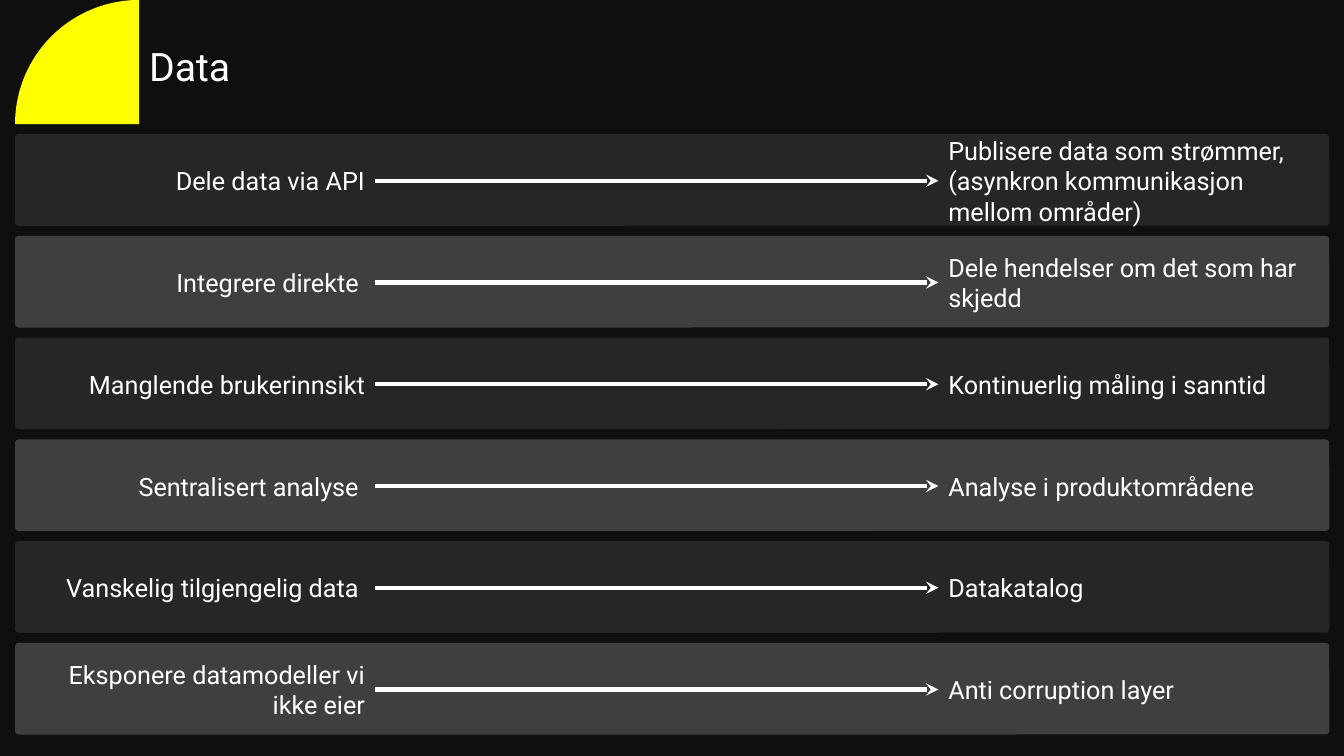
from math import cos, pi, sin

from lxml import etree
from pptx import Presentation
from pptx.dml.color import RGBColor
from pptx.enum.shapes import MSO_CONNECTOR, MSO_SHAPE
from pptx.enum.text import MSO_ANCHOR, PP_ALIGN
from pptx.oxml.ns import qn
from pptx.util import Cm, Pt

COLORS = {
    "background": "0F0F0F",
    "dark": "262626",
    "light": "3F3F3F",
    "text": "FFFFFF",
    "accent": "FFFF00",
}
ROWS = [
    ("Dele data via API",
     ["Publisere data som strømmer,", "(asynkron kommunikasjon mellom områder)"]),
    ("Integrere direkte ", ["Dele hendelser om det som har skjedd"]),
    ("Manglende brukerinnsikt", ["Kontinuerlig måling i sanntid"]),
    ("Sentralisert analyse ", ["Analyse i produktområdene"]),
    ("Vanskelig tilgjengelig data ", ["Datakatalog"]),
    ("Eksponere datamodeller vi ikke eier", ["Anti corruption layer"]),
]

# Layout in centimetres
LEFT, BAND_W, BAND_H = 0.38, 33.12, 2.31
FIRST_TOP, LAST_TOP = 3.38, 16.2
PITCH = (LAST_TOP - FIRST_TOP) / (len(ROWS) - 1)
FROM_W, TO_LEFT, LABEL_H = 9.07, 23.65, 1.02
RADIUS = 3.13


def rgb(name):
    return RGBColor.from_string(COLORS[name])


def add_text(shapes, x, y, w, h, lines, size, align=PP_ALIGN.LEFT):
    sp = shapes.add_textbox(Cm(x), Cm(y), Cm(w), Cm(h))
    tf = sp.text_frame
    tf.word_wrap = True
    tf.vertical_anchor = MSO_ANCHOR.MIDDLE
    tf.text = "\n".join(lines)
    for p in tf.paragraphs:
        p.alignment = align
        p.font.name = "Roboto"
        p.font.size = Pt(size)
        p.font.color.rgb = rgb("text")
    return sp


prs = Presentation()
prs.slide_width, prs.slide_height = Cm(33.87), Cm(19.05)
s = prs.slides.add_slide(prs.slide_layouts[6])
s.background.fill.solid()
s.background.fill.fore_color.rgb = rgb("background")

# Title with quarter circle
add_text(s.shapes, 3.51, 0.94, 2.62, 1.45, ["Data"], 28)
corner = LEFT + RADIUS
arc = [(corner - RADIUS * sin(i * pi / 120), RADIUS - RADIUS * cos(i * pi / 120))
       for i in range(61)]
builder = s.shapes.build_freeform(Cm(corner), Cm(RADIUS), scale=1.0)
builder.add_line_segments([(Cm(x), Cm(y)) for x, y in arc], close=True)
quarter = builder.convert_to_shape()
quarter.shadow.inherit = False
quarter.fill.solid()
quarter.fill.fore_color.rgb = rgb("accent")
quarter.line.fill.background()

# Rows: band, then a group of two labels joined by an arrow
for i, (before, after) in enumerate(ROWS):
    top = FIRST_TOP + i * PITCH
    band = s.shapes.add_shape(MSO_SHAPE.ROUNDED_RECTANGLE,
                              Cm(LEFT), Cm(top), Cm(BAND_W), Cm(BAND_H))
    band.adjustments[0] = 0.04
    band.shadow.inherit = False
    band.fill.solid()
    band.fill.fore_color.rgb = rgb("light" if i % 2 else "dark")
    band.line.fill.background()

    group = s.shapes.add_group_shape().shapes
    label_top = top + (BAND_H - LABEL_H) / 2 + 0.02
    source = add_text(group, LEFT, label_top, FROM_W, LABEL_H, [before], 18,
                      PP_ALIGN.RIGHT)
    target = add_text(group, TO_LEFT, label_top, LEFT + BAND_W - TO_LEFT, LABEL_H,
                      after, 18)
    middle = Cm(label_top + LABEL_H / 2)
    arrow = group.add_connector(MSO_CONNECTOR.STRAIGHT, Cm(LEFT + FROM_W), middle,
                                Cm(TO_LEFT), middle)
    arrow.begin_connect(source, 3)
    arrow.end_connect(target, 1)
    arrow.line.color.rgb = rgb("text")
    arrow.line.width = Pt(3)
    etree.SubElement(arrow.line._get_or_add_ln(), qn("a:tailEnd"), type="stealth")
    etree.SubElement(arrow._element.spPr, qn("a:effectLst"))

prs.save("out.pptx")
